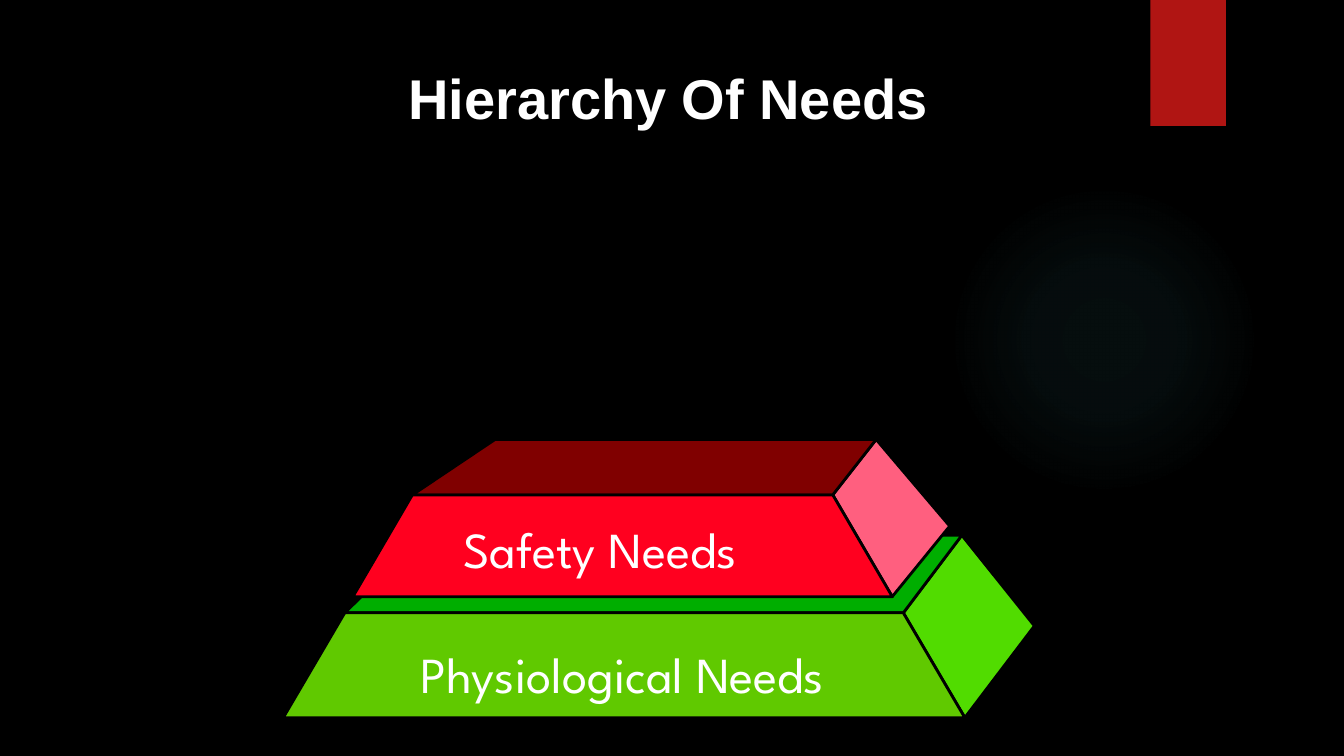
from lxml import etree
from pptx import Presentation
from pptx.dml.color import RGBColor
from pptx.enum.shapes import MSO_SHAPE
from pptx.enum.text import MSO_AUTO_SIZE, PP_ALIGN
from pptx.oxml.ns import qn
from pptx.util import Inches, Pt

OVAL, RECT = MSO_SHAPE.OVAL, MSO_SHAPE.RECTANGLE
GROW = MSO_AUTO_SIZE.SHAPE_TO_FIT_TEXT
LEFT, CENTER = PP_ALIGN.LEFT, PP_ALIGN.CENTER
HUES = {
    "black": "000000", "white": "FFFFFF", "tab": "B01513", "glow": "50B9C1",
    "lime": "60C900", "green": "00AE00", "leaf": "51DC00",
    "red": "FF001F", "maroon": "800000", "pink": "FF5F7F",
}
GLOW = [(0, 7), (36, 6), (69, 0)]


def color(name):
    return RGBColor.from_string(HUES[name])


def paint(shape, fill):
    shape.shadow.inherit = False
    shape.fill.solid()
    shape.fill.fore_color.rgb = color(fill)


def add_glow(slide, box):
    disc = slide.shapes.add_shape(OVAL, *map(Inches, box))
    paint(disc, "glow")
    disc.line.fill.background()
    solid = disc._element.spPr.find(qn("a:solidFill"))
    grad = etree.Element(qn("a:gradFill"))
    stops = etree.SubElement(grad, qn("a:gsLst"))
    for place, alpha in GLOW:
        stop = etree.SubElement(stops, qn("a:gs"), pos=str(place * 1000))
        tone = etree.SubElement(stop, qn("a:srgbClr"), val=HUES["glow"])
        etree.SubElement(tone, qn("a:alpha"), val=str(alpha * 1000))
    route = etree.SubElement(grad, qn("a:path"), path="circle")
    sides = dict.fromkeys("ltrb", "50000")
    etree.SubElement(route, qn("a:fillToRect"), **sides)
    solid.getparent().replace(solid, grad)


def add_tab(slide, box):
    tab = slide.shapes.add_shape(RECT, *map(Inches, box))
    paint(tab, "tab")
    tab.line.fill.background()


def add_face(slide, points, fill):
    spots = [(Inches(x), Inches(y)) for x, y in points]
    pen = slide.shapes.build_freeform(*spots[0])
    pen.add_line_segments(spots[1:], close=True)
    face = pen.convert_to_shape()
    paint(face, fill)
    face.line.color.rgb = color("black")
    face.line.width = Pt(2)


def add_tier(slide, box, slant, rise, lean, wing, drop, fills):
    left, top, width, height = box
    base, edge = top + height, top + rise
    end = left + width - wing
    front_left, front_right = (left + slant, edge), (end - slant, edge)
    back_left = (left + slant + lean[0], top)
    back_right = (end - slant + lean[1], top)
    corner = (end, base)
    side = [corner, front_right, back_right, (left + width, top + drop)]
    roof = [front_left, front_right, back_right, back_left]
    front = [front_left, front_right, corner, (left, base)]
    for points, fill in zip((side, roof, front), fills):
        add_face(slide, points, fill)


def add_label(slide, box, text, size, font, align=CENTER, wrap=True, bold=False):
    frame = slide.shapes.add_textbox(*map(Inches, box)).text_frame
    frame.word_wrap = wrap
    frame.auto_size = GROW
    frame.text = text
    line = frame.paragraphs[0]
    line.alignment = align
    style = line.runs[0].font
    style.size, style.name, style.bold = Pt(size), font, bold
    style.color.rgb = color("white")


def main():
    deck = Presentation()
    deck.slide_width, deck.slide_height = Inches(13.33), Inches(7.5)
    slide = deck.slides.add_slide(deck.slide_layouts[6])
    slide.background.fill.solid()
    slide.background.fill.fore_color.rgb = color("black")

    add_glow(slide, (9.41, 1.83, 3.08, 3.08))
    add_tab(slide, (11.41, 0, 0.75, 1.25))
    add_tier(slide, (2.81, 5.31, 7.45, 1.81), 0.61, 0.77, (0.78, 0.58),
             0.69, 0.9, ("leaf", "green", "lime"))
    add_label(slide, (4.07, 6.33, 4.91, 0.7), "Physiological Needs", 36,
              "League Spartan", LEFT, False)
    add_tier(slide, (3.5, 4.36, 5.92, 1.56), 0.59, 0.55, (0.82, 0.43),
             0.57, 0.86, ("pink", "maroon", "red"))
    add_label(slide, (1.67, 0.58, 9.91, 0.77), "Hierarchy Of Needs", 40,
              "Arial", bold=True)
    add_label(slide, (3.65, 5.09, 4.6, 0.7), "Safety Needs", 36,
              "League Spartan")
    deck.save("out.pptx")


if __name__ == "__main__":
    main()
